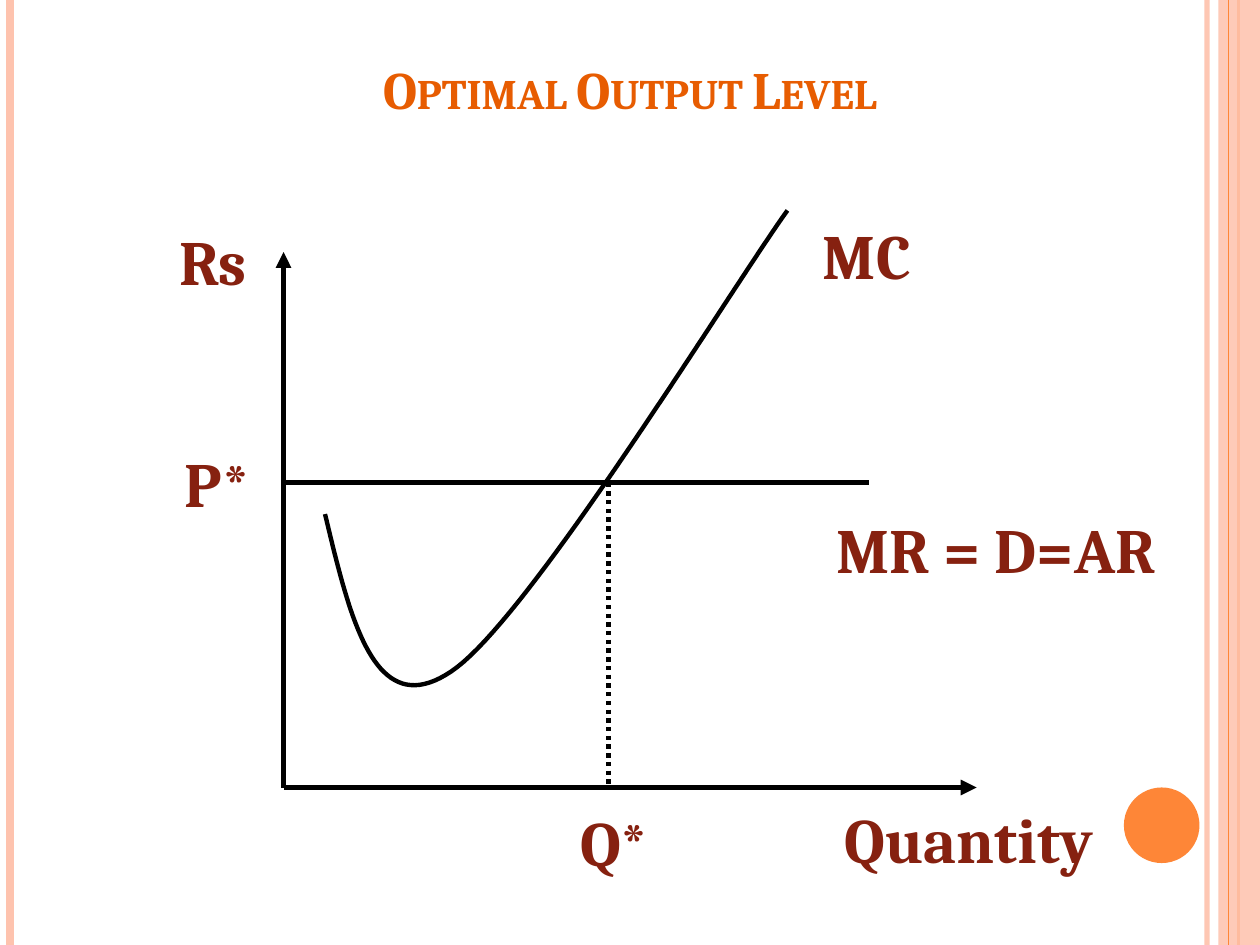
from pptx import Presentation
from pptx import util as u
from pptx.dml.color import RGBColor
from pptx.enum import dml, shapes, text
from pptx.oxml.ns import qn
from lxml import etree

COLORS = {"peach": "FEC3AE", "orange": "FE8637", "title": "E75C01",
          "label": "862110", "ink": "000000"}
FONT = "Cambria"
W, H = 10, 7.5

# Chart geometry: origin, axis ends and the optimum
X0, Y0 = 2.25, 6.25
X_END, Y_END = 7.75, 2
Q, P = 4.83, 3.83
DEMAND_END = 6.9

TITLE = "Optimal Output Level"
# x, width, colour, opacity in percent
RULES_BELOW = [(9.58, 3, "peach", 93), (0.08, 4.5, "peach", 100),
               (9.83, 1.5, "orange", 100)]
RULES_ABOVE = [(9.75, 0.75, "orange", 100)]
# text, left, top, width, anchor
LABELS = [
    ("Rs", 1.31, 1.72, 0.76, "TOP"),
    ("MC", 6.42, 1.67, 0.92, "TOP"),
    ("MR = D=AR", 6.5, 4, 2.81, "TOP"),
    ("Quantity", 6.58, 6.3, 2.22, "TOP"),
    ("Q*", 4.49, 6.32, 0.78, "MIDDLE"),
    ("P*", 1.36, 3.47, 0.74, "MIDDLE"),
]
# Marginal cost: Bezier segments
MC_CURVE = [
    [(2.58, 4.08), (2.78, 4.91), (2.97, 5.74), (3.58, 5.33)],
    [(3.58, 5.33), (4.19, 4.93), (5.81, 2.28), (6.25, 1.67)],
]
STEPS = 40

prs = Presentation()
prs.slide_width, prs.slide_height = u.Inches(W), u.Inches(H)
s = prs.slides.add_slide(prs.slide_layouts[5])


def inches(*values):
    return [u.Inches(v) for v in values]


def paint(fill, color, opacity=100):
    fill.solid()
    fill.fore_color.rgb = RGBColor.from_string(COLORS[color])
    if opacity < 100:
        clr = fill._xPr.find(qn("a:solidFill"))[0]
        etree.SubElement(clr, qn("a:alpha"), val=str(opacity * 1000))


def line(x1, y1, x2, y2, width, color="ink", opacity=100, arrow=False, dash=None):
    c = s.shapes.add_connector(shapes.MSO_CONNECTOR.STRAIGHT, *inches(x1, y1, x2, y2))
    c.line.width = u.Pt(width)
    paint(c.line.fill, color, opacity)
    if dash:
        c.line.dash_style = dash
    if arrow:
        etree.SubElement(c.line._get_or_add_ln(), qn("a:tailEnd"), type="triangle")
    etree.SubElement(c._element.spPr, qn("a:effectLst"))


def rule(x, width, color, opacity):
    line(x, 0, x, H, width, color, opacity)


def block(kind, color, box, opacity=100):
    sp = s.shapes.add_shape(kind, *inches(*box))
    sp.shadow.inherit = False
    sp.line.fill.background()
    paint(sp.fill, color, opacity)


def write(tf, words, size, color, **frame):
    for name, value in frame.items():
        setattr(tf, name, value)
    p = tf.paragraphs[0]
    p.alignment = text.PP_ALIGN.CENTER
    r = p.add_run()
    r.text = words
    for name, value in dict(name=FONT, size=u.Pt(size), bold=True).items():
        setattr(r.font, name, value)
    r.font.color.rgb = RGBColor.from_string(COLORS[color])
    return r


def bezier(points, t):
    weights = ((1 - t) ** 3, 3 * t * (1 - t) ** 2, 3 * t * t * (1 - t), t ** 3)
    return tuple(u.Inches(sum(w * pt[i] for w, pt in zip(weights, points)))
                 for i in (0, 1))


# Side bands and corner disc
for args in RULES_BELOW:
    rule(*args)
block(shapes.MSO_SHAPE.RECTANGLE, "peach", (9.67, 0, 0.33, H), 87)
for args in RULES_ABOVE:
    rule(*args)
block(shapes.MSO_SHAPE.OVAL, "orange", (8.92, 6.25, 0.6, 0.6))

# Axes, demand line and the drop to the optimal quantity
line(X0, Y0, X0, Y_END, 3, arrow=True)
line(X0, Y0, X_END, Y0, 3, arrow=True)
line(X0, P, DEMAND_END, P, 2.5)
line(Q, P, Q, Y0, 2.5, dash=dml.MSO_LINE.ROUND_DOT)

# Marginal cost curve
curve = [bezier(seg, i / STEPS) for seg in MC_CURVE for i in range(STEPS + 1)]
fb = s.shapes.build_freeform(*curve[0])
fb.add_line_segments(curve[1:], close=False)
mc = fb.convert_to_shape()
mc.shadow.inherit = False
mc.fill.background()
mc.line.width = u.Pt(2.5)
paint(mc.line.fill, "ink")

# Labels
for words, x, y, w, anchor in LABELS:
    tb = s.shapes.add_textbox(*inches(x, y, w, 0.71))
    write(tb.text_frame, words, 36, "label", word_wrap=False,
          auto_size=text.MSO_AUTO_SIZE.SHAPE_TO_FIT_TEXT,
          vertical_anchor=getattr(text.MSO_ANCHOR, anchor))

# Title
title = s.shapes.title
title.left, title.top, title.width, title.height = inches(0.75, 0.25, 8.5, 0.75)
r = write(title.text_frame, TITLE, 30, "title", word_wrap=True,
          auto_size=text.MSO_AUTO_SIZE.NONE,
          vertical_anchor=text.MSO_ANCHOR.BOTTOM)
r._r.get_or_add_rPr().set("cap", "small")

prs.save("out.pptx")
